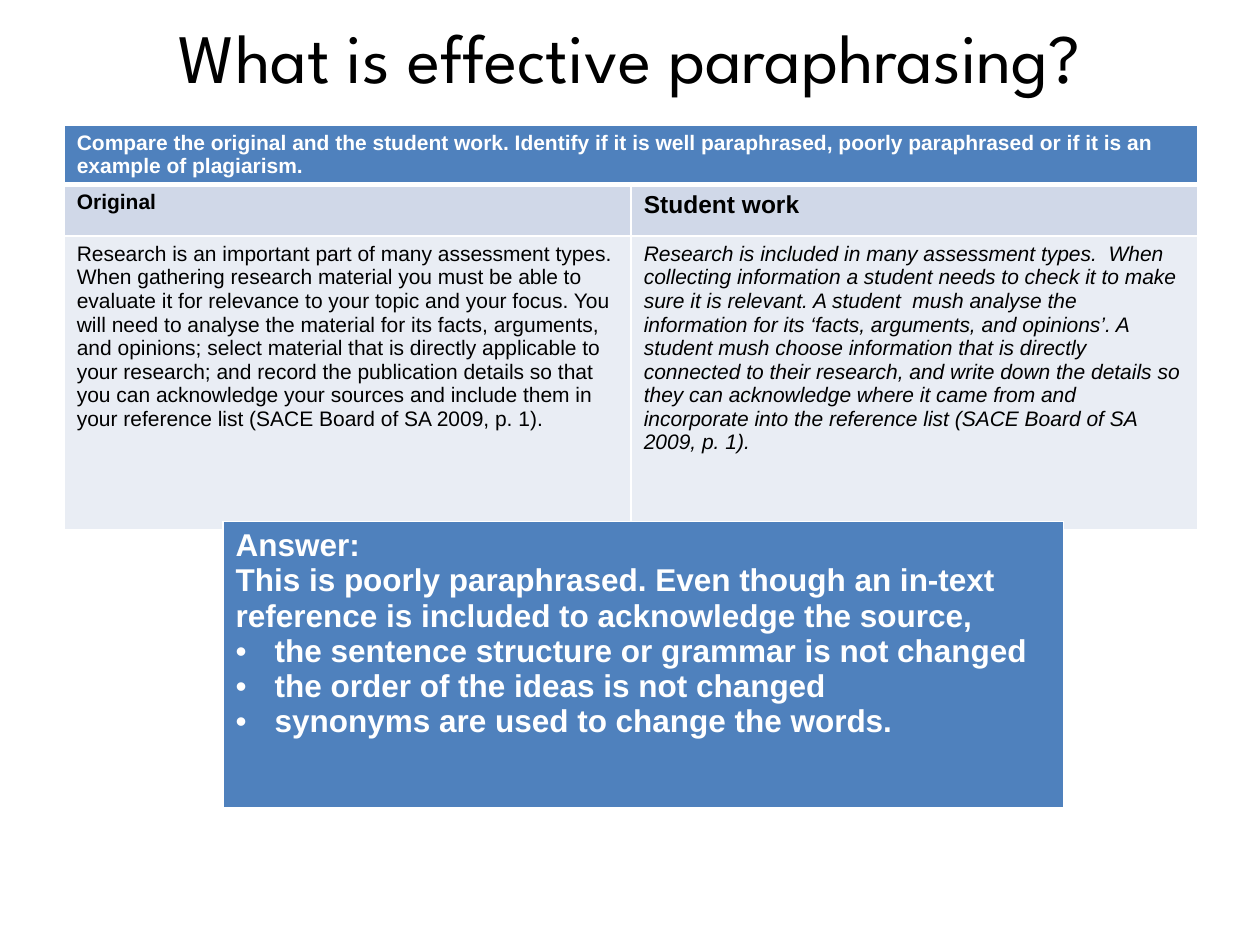
from lxml.etree import SubElement
from pptx import Presentation
from pptx.dml.color import RGBColor
from pptx.enum.text import MSO_ANCHOR, PP_ALIGN
from pptx.oxml.ns import qn
from pptx.util import Inches, Pt

TITLE = "What is effective paraphrasing?"
TASK = ("Compare the original and the student work. Identify if it is well paraphrased, "
        "poorly paraphrased or if it is an example of plagiarism.")
ORIGINAL = (
    "Research is an important part of many assessment types. When gathering research material "
    "you must be able to evaluate it for relevance to your topic and your focus. You will need "
    "to analyse the material for its facts, arguments, and opinions; select material that is "
    "directly applicable to your research; and record the publication details so that you can "
    "acknowledge your sources and include them in your reference list "
    "(SACE Board of SA 2009, p. 1).")
STUDENT = (
    "Research is included in many assessment types.  When collecting information a student needs "
    "to check it to make sure it is relevant. A student  mush analyse the information for its "
    "‘facts, arguments, and opinions’. A student mush choose information that is directly "
    "connected to their research, and write down the details so they can acknowledge where it "
    "came from and incorporate into the reference list (SACE Board of SA 2009, p. 1).")
ANSWER = ["Answer:",
          "This is poorly paraphrased. Even though an in-text reference is included to "
          "acknowledge the source,"]
REASONS = ["the sentence structure or grammar is not changed",
           "the order of the ideas is not changed",
           "synonyms are used to change the words."]

BLUE, PALE, PALER, WHITE, BLACK = "4F81BD", "D0D8E8", "E9EDF4", "FFFFFF", "000000"
COMPARISON = [
    (0.47, [dict(lines=[TASK], fill=BLUE, color=WHITE, bold=True, bottom=3),
            dict(lines=[], fill=BLUE, bottom=3)]),
    (0.41, [dict(lines=["Original"], fill=PALE, bold=True),
            dict(lines=["Student work"], fill=PALE, bold=True, size=14)]),
    (2.33, [dict(lines=[ORIGINAL], fill=PALER),
            dict(lines=[STUDENT], fill=PALER, italic=True)]),
]
ANSWER_BOX = [(2.28, [dict(lines=ANSWER, bullets=REASONS, fill=BLUE, color=WHITE,
                           bold=True, size=18, bottom=3)])]


def rgb(value):
    return RGBColor.from_string(value)


def add_borders(cell, bottom):
    properties = cell._tc.get_or_add_tcPr()
    for side, width in (("L", 1), ("R", 1), ("T", 1), ("B", bottom)):
        line = SubElement(properties, qn(f"a:ln{side}"), w=str(Pt(width)))
        SubElement(SubElement(line, qn("a:solidFill")), qn("a:srgbClr"), val=WHITE)


def add_bullet(para):
    properties = para._p.get_or_add_pPr()
    properties.set("marL", str(Inches(0.31)))
    properties.set("indent", str(-Inches(0.31)))
    SubElement(properties, qn("a:buFont"), typeface="Arial")
    SubElement(properties, qn("a:buChar"), char="•")


def style(para, size, color, bold=False, italic=False, name="Arial"):
    for span in para.runs:
        font = span.font
        font.name, font.size, font.bold, font.italic = name, Pt(size), bold, italic
        font.color.rgb = rgb(color)


def fill_cell(cell, lines, fill, bullets=(), color=BLACK, size=12, bold=False,
              italic=False, bottom=1):
    add_borders(cell, bottom)
    cell.fill.solid()
    cell.fill.fore_color.rgb = rgb(fill)
    if not lines:
        return
    cell.text_frame.text = "\n".join([*lines, *bullets])
    for index, para in enumerate(cell.text_frame.paragraphs):
        if index >= len(lines):
            add_bullet(para)
        style(para, size, color, bold, italic)


def add_table(page, left, top, width, rows):
    columns = len(rows[0][1])
    height = sum(row_height for row_height, cells in rows)
    table = page.shapes.add_table(len(rows), columns, Inches(left), Inches(top),
                                  Inches(width), Inches(height)).table
    for row, (row_height, cells) in enumerate(rows):
        table.rows[row].height = Inches(row_height)
        for column, content in enumerate(cells):
            fill_cell(table.cell(row, column), **content)
    return table


def add_title(page):
    box = page.shapes.add_textbox(Inches(0.12), Inches(0.13), Inches(9.76), Inches(0.63))
    frame = box.text_frame
    frame.word_wrap = True
    frame.vertical_anchor = MSO_ANCHOR.MIDDLE
    frame.text = TITLE
    para = frame.paragraphs[0]
    para.alignment = PP_ALIGN.CENTER
    style(para, 39.6, BLACK, name="League Spartan")


def main():
    deck = Presentation()
    deck.slide_width, deck.slide_height = Inches(10), Inches(7.5)
    page = deck.slides.add_slide(deck.slide_layouts[6])
    comparison = add_table(page, 0.51, 0.99, 9, COMPARISON)
    comparison.cell(0, 0).merge(comparison.cell(0, 1))
    add_title(page)
    add_table(page, 1.77, 4.14, 6.67, ANSWER_BOX)
    deck.save("out.pptx")


if __name__ == "__main__":
    main()
